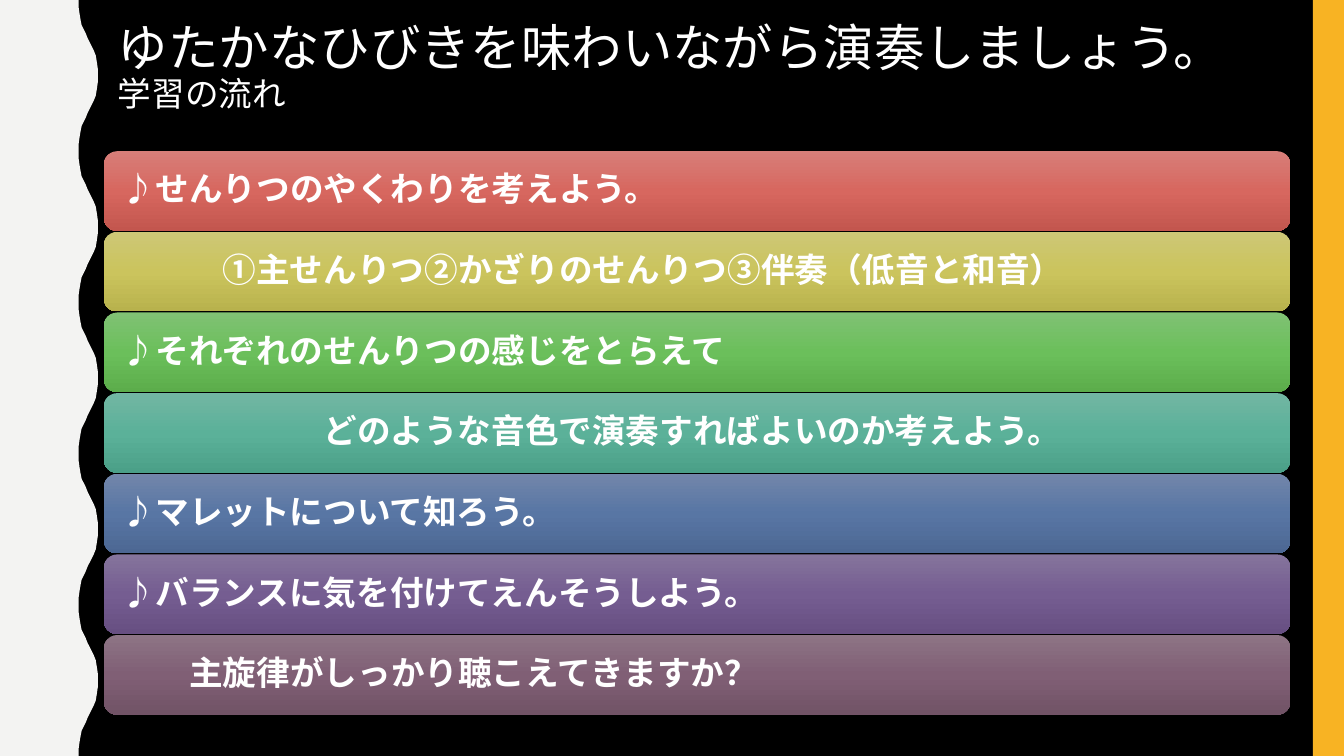
from copy import deepcopy

from pptx import Presentation
from pptx.dml.color import RGBColor
from pptx.enum.shapes import MSO_SHAPE
from pptx.enum.text import MSO_ANCHOR, MSO_AUTO_SIZE, PP_ALIGN
from pptx.oxml.ns import qn
from pptx.util import Inches, Pt

RECTANGLE, ROUNDED = MSO_SHAPE.RECTANGLE, MSO_SHAPE.ROUNDED_RECTANGLE
TOP, MIDDLE = MSO_ANCHOR.TOP, MSO_ANCHOR.MIDDLE
LEFT = PP_ALIGN.LEFT
NO_FIT = MSO_AUTO_SIZE.NONE

TITLE = "ゆたかなひびきを味わいながら演奏しましょう。"
SUBTITLE = "学習の流れ"
# text, indent in inches, gradient from top to bottom
STEPS = [
    ("♪せんりつのやくわりを考えよう。", 0, ("D77E79", "D7675F", "C3564E")),
    ("①主せんりつ②かざりのせんりつ③伴奏（低音と和音）", 1, ("CDC776", "CBC45D", "B8B24D")),
    ("♪それぞれのせんりつの感じをとらえて", 0, ("80C274", "6BBF5B", "5CAD4B")),
    ("どのような音色で演奏すればよいのか考えよう。", 2, ("72B6A3", "5BB199", "4BA088")),
    ("♪マレットについて知ろう。", 0, ("7286AA", "5876A4", "4C6793")),
    ("♪バランスに気を付けてえんそうしよう。", 0, ("85749C", "755D91", "674F82")),
    ("主旋律がしっかり聴こえてきますか？", 0.67, ("8D7485", "805F75", "715366")),
]

BLACK = RGBColor(0, 0, 0)
WHITE = RGBColor(255, 255, 255)
PAPER = RGBColor(0xF3, 0xF3, 0xF2)
GOLD = RGBColor(0xF8, 0xB3, 0x23)
TITLE_FONT, STEP_FONT = "Arial Narrow", "Noto Sans CJK JP"

WIDTH, HEIGHT = 13.33, 7.5
BAND_WIDTH = 0.31
BAR_LEFT, BAR_TOP, BAR_WIDTH, BAR_HEIGHT, BAR_PITCH = 1.03, 1.5, 11.77, 0.79, 0.8
WAVE_COUNT = 5
WAVE_LENGTH = HEIGHT / WAVE_COUNT
HALF_WAVE = [
    (0.78, 0), (0.78, 0.07), (0.79, 0.14), (0.8, 0.2), (0.81, 0.25),
    (0.83, 0.29), (0.85, 0.33), (0.87, 0.38), (0.89, 0.42), (0.91, 0.46),
    (0.93, 0.5), (0.95, 0.55), (0.96, 0.61), (0.97, 0.68), (0.97, 0.75),
]


def make_plain(shape, color=None):
    shape.shadow.inherit = False
    shape.line.fill.background()
    if color is not None:
        shape.fill.solid()
        shape.fill.fore_color.rgb = color


def add_wavy_edge(page):
    wave = HALF_WAVE + [(x, WAVE_LENGTH - y) for x, y in HALF_WAVE[-2::-1]]
    edge = [(x, y + number * WAVE_LENGTH) for number in range(WAVE_COUNT) for x, y in wave]
    builder = page.shapes.build_freeform(0, 0)
    builder.add_line_segments([(Inches(x), Inches(y)) for x, y in edge + [(0, HEIGHT)]])
    make_plain(builder.convert_to_shape(), PAPER)


def fill_gradient(shape, colors):
    shape.fill.gradient()
    shape.fill.gradient_angle = 270
    stop_list = shape.fill.gradient_stops
    stops = shape._element.spPr.find(qn("a:gradFill")).find(qn("a:gsLst"))
    for _ in range(len(colors) - len(stop_list)):
        stops.append(deepcopy(stops[0]))
    for number, (stop, color) in enumerate(zip(shape.fill.gradient_stops, colors)):
        stop.position = number / (len(colors) - 1)
        stop.color.rgb = RGBColor.from_string(color)


def add_title(page):
    box = page.shapes.title
    box.left, box.top, box.width, box.height = map(Inches, (1.07, 0.18, 11.43, 1.87))
    frame = box.text_frame
    frame.word_wrap = True
    frame.auto_size = NO_FIT
    frame.vertical_anchor = TOP
    para = frame.paragraphs[0]
    para.alignment = LEFT
    para.line_spacing = 0.9
    for text, size in ((TITLE, 36), (SUBTITLE, 24)):
        if para.runs:
            para.add_line_break()
        span = para.add_run()
        span.text = text
        span.font.size = Pt(size)
        span.font.name = TITLE_FONT
        span.font.color.rgb = WHITE


def add_step(page, row, text, indent, colors):
    bar = page.shapes.add_shape(
        ROUNDED, Inches(BAR_LEFT), Inches(BAR_TOP + row * BAR_PITCH),
        Inches(BAR_WIDTH), Inches(BAR_HEIGHT))
    bar.adjustments[0] = 0.167
    make_plain(bar)
    fill_gradient(bar, colors)
    frame = bar.text_frame
    frame.word_wrap = True
    frame.vertical_anchor = MIDDLE
    frame.margin_left = frame.margin_right = Inches(0.14)
    para = frame.paragraphs[0]
    para.text = text
    para.alignment = LEFT
    para.line_spacing = 0.9
    para.font.size = Pt(24)
    para.font.bold = True
    para.font.name = STEP_FONT
    para.font.color.rgb = WHITE
    properties = para._p.get_or_add_pPr()
    properties.set("marL", str(Inches(indent)))
    latin = properties.find(qn("a:defRPr")).find(qn("a:latin"))
    east_asian = latin.makeelement(qn("a:ea"), {"typeface": STEP_FONT})
    latin.addnext(east_asian)


def main():
    deck = Presentation()
    deck.slide_width, deck.slide_height = Inches(WIDTH), Inches(HEIGHT)
    page = deck.slides.add_slide(deck.slide_layouts[5])
    page.background.fill.solid()
    page.background.fill.fore_color.rgb = BLACK
    add_wavy_edge(page)
    band = page.shapes.add_shape(
        RECTANGLE, Inches(WIDTH - BAND_WIDTH), 0, Inches(BAND_WIDTH), Inches(HEIGHT))
    make_plain(band, GOLD)
    add_title(page)
    for row, step in enumerate(STEPS):
        add_step(page, row, *step)
    deck.save("out.pptx")


if __name__ == "__main__":
    main()
